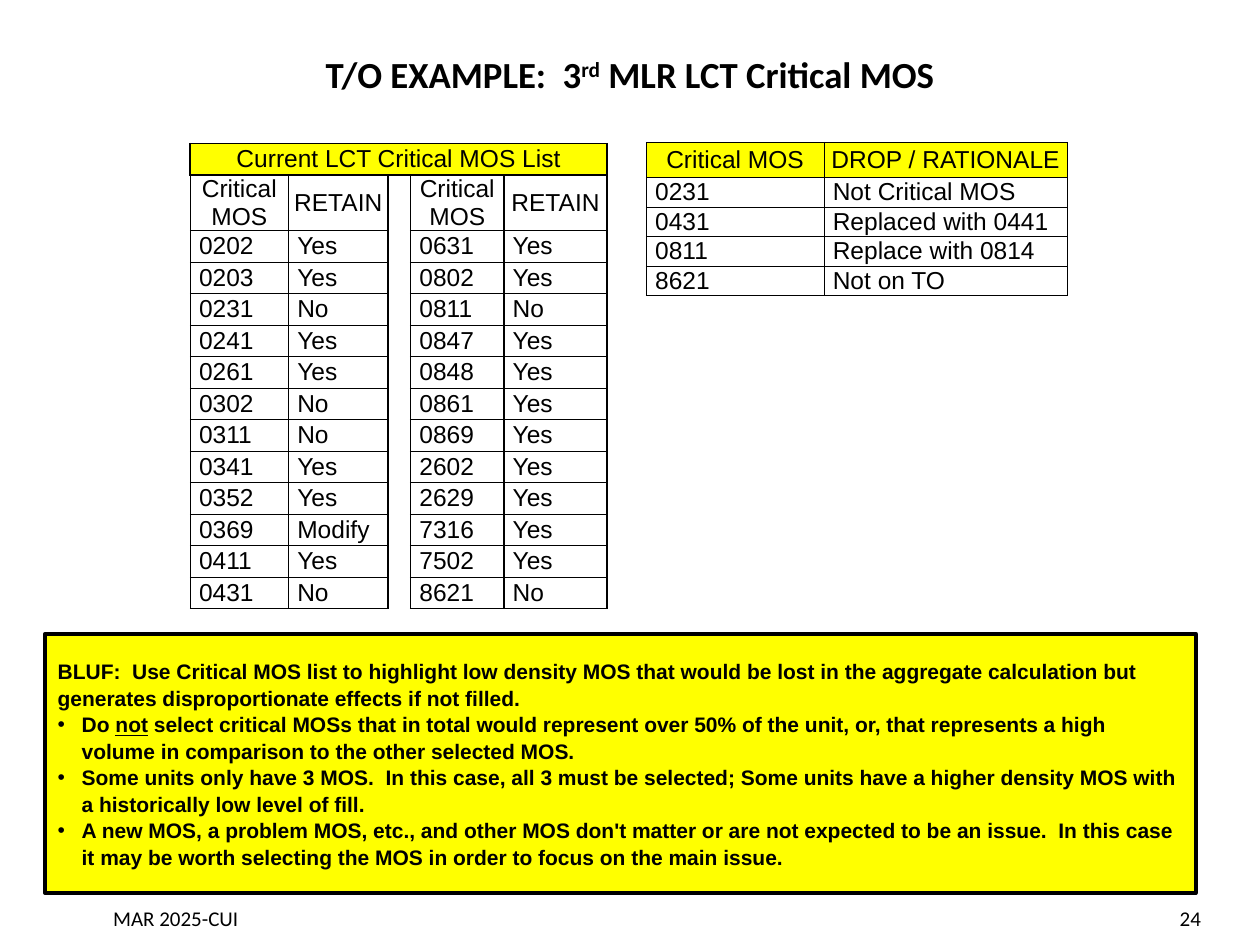
import pptx
import pptx.dml.color
import pptx.enum.shapes
import pptx.enum.text
import pptx.oxml.ns
import pptx.util
from lxml import etree

SLIDE_WIDTH = pptx.util.Inches(10)
SLIDE_HEIGHT = pptx.util.Inches(7.5)
UNIT = SLIDE_WIDTH / 100
COLORS = {"ink": "000000", "paper": "FFFFFF", "highlight": "FFFF00"}
ALIGN = pptx.enum.text.PP_ALIGN
THIN, THICK = 0.5, 1
CELL_INSET = 0.7

RETAIN_LEFT = [
    ("0202", "Yes"), ("0203", "Yes"), ("0231", "No"), ("0241", "Yes"),
    ("0261", "Yes"), ("0302", "No"), ("0311", "No"), ("0341", "Yes"),
    ("0352", "Yes"), ("0369", "Modify"), ("0411", "Yes"), ("0431", "No"),
]
RETAIN_RIGHT = [
    ("0631", "Yes"), ("0802", "Yes"), ("0811", "No"), ("0847", "Yes"),
    ("0848", "Yes"), ("0861", "Yes"), ("0869", "Yes"), ("2602", "Yes"),
    ("2629", "Yes"), ("7316", "Yes"), ("7502", "Yes"), ("8621", "No"),
]
DROPS = [
    ("Critical MOS", "DROP / RATIONALE"),
    ("0231", "Not Critical MOS"),
    ("0431", "Replaced with 0441"),
    ("0811", "Replace with 0814"),
    ("8621", "Not on TO"),
]
BLUF = (
    "BLUF:  Use Critical MOS list to highlight low density MOS that would be lost in the "
    "aggregate calculation but generates disproportionate effects if not filled."
)
BLUF_BULLETS = [
    [
        "Do ",
        ("not", {"u": "sng"}),
        " select critical MOSs that in total would represent over 50% of the unit, or, that "
        "represents a high volume in comparison to the other selected MOS.",
    ],
    "Some units only have 3 MOS.  In this case, all 3 must be selected; Some units have a "
    "higher density MOS with a historically low level of fill.",
    "A new MOS, a problem MOS, etc., and other MOS don't matter or are not expected to be an "
    "issue.  In this case it may be worth selecting the MOS in order to focus on the main issue.",
]


def grid(units):
    return pptx.util.Emu(round(units * UNIT))


def color(name):
    return pptx.dml.color.RGBColor.from_string(COLORS[name])


def add_element(parent, tag, **attributes):
    return etree.SubElement(parent, pptx.oxml.ns.qn(tag), attributes)


def write(paragraph, text, size=12, font="Arial", bold=False, align=ALIGN.LEFT,
          bullet=False, spacing=None):
    if bullet:
        properties = paragraph._p.get_or_add_pPr()
        indent = grid(1.9)
        properties.set("marL", str(indent))
        properties.set("indent", str(-indent))
        add_element(properties, "a:buFont", typeface="Arial")
        add_element(properties, "a:buChar", char="•")
    paragraph.alignment = align
    if spacing:
        paragraph.line_spacing = spacing
    for part in [text] if isinstance(text, str) else text:
        words, extras = (part, {}) if isinstance(part, str) else part
        run = paragraph.add_run()
        run.text = words
        run.font.size = pptx.util.Pt(size)
        run.font.name = font
        run.font.bold = bold
        run.font.color.rgb = color("ink")
        for key, value in extras.items():
            run._r.get_or_add_rPr().set(key, value)


def add_label(slide, box, text, **style):
    label = slide.shapes.add_textbox(*map(grid, box)).text_frame
    label.word_wrap = True
    label.vertical_anchor = pptx.enum.text.MSO_ANCHOR.MIDDLE
    write(label.paragraphs[0], text, font="Calibri", **style)


def set_borders(cell, widths):
    properties = cell._tc.get_or_add_tcPr()
    for side, width in zip("LRTB", widths):
        line = add_element(properties, f"a:ln{side}", w=str(pptx.util.Pt(width)))
        if width:
            fill = add_element(line, "a:solidFill")
            add_element(fill, "a:srgbClr", val=COLORS["ink"])
        else:
            add_element(line, "a:noFill")


def fill_cell(cell, text, borders, fill="paper", heading=False, right_inset=0):
    set_borders(cell, borders)
    cell.fill.solid()
    cell.fill.fore_color.rgb = color(fill)
    cell.margin_top = cell.margin_bottom = 0
    cell.margin_left = 0 if heading else grid(CELL_INSET)
    cell.margin_right = grid(right_inset)
    cell.vertical_anchor = pptx.enum.text.MSO_ANCHOR.MIDDLE
    paragraph = cell.text_frame.paragraphs[0]
    if text:
        write(paragraph, text, size=14, align=ALIGN.CENTER if heading else ALIGN.LEFT)
    else:
        add_element(paragraph._p, "a:endParaRPr", sz="1400")


def add_grid_table(slide, left, top, widths, heights):
    box = (left, top, sum(widths), sum(heights))
    table = slide.shapes.add_table(len(heights), len(widths), *map(grid, box)).table
    table.first_row = table.horz_banding = False
    for column, width in zip(table.columns, widths):
        column.width = grid(width)
    for row, height in zip(table.rows, heights):
        row.height = grid(height)
    return table


def add_retain_table(slide):
    headings = ("Critical MOS", "RETAIN")
    rows = [("Current LCT Critical MOS List", "", "", "", ""), (*headings, "", *headings)]
    rows += [(*left, "", *right) for left, right in zip(RETAIN_LEFT, RETAIN_RIGHT)]
    heights = [2.5, 4.4] + [2.5] * len(RETAIN_LEFT)
    table = add_grid_table(slide, 15.1, 11.4, (7.8, 7.9, 1.8, 7.4, 8.2), heights)
    table.cell(0, 0).merge(table.cell(0, 4))
    for r, row in enumerate(rows):
        for c, text in enumerate(row):
            title, gap = r == 0, c == 2 and r > 0
            left = THIN if c == 0 and not title else THICK
            top = THICK if r < 2 else 0 if gap else THIN
            bottom = THICK if title else 0 if gap else THIN
            fill_cell(table.cell(r, c), text, (left, THICK, top, bottom),
                      fill="highlight" if title else "paper", heading=r < 2,
                      right_inset=CELL_INSET if r > 1 and c < 2 else 0)


def add_drop_table(slide):
    heights = [2.8] + [2.25] * (len(DROPS) - 1)
    table = add_grid_table(slide, 51.3, 11.3, (14.1, 19.3), heights)
    for r, row in enumerate(DROPS):
        for c, text in enumerate(row):
            fill_cell(table.cell(r, c), text, [THIN] * 4,
                      fill="paper" if r else "highlight", heading=r == 0)


def add_bluf_panel(slide):
    panel = slide.shapes.add_shape(
        pptx.enum.shapes.MSO_SHAPE.RECTANGLE, *map(grid, (3.6, 50.3, 91.3, 20.6)))
    panel.shadow.inherit = False
    panel.fill.solid()
    panel.fill.fore_color.rgb = color("highlight")
    panel.line.color.rgb = color("ink")
    panel.line.width = pptx.util.Pt(2.25)
    frame = panel.text_frame
    frame.word_wrap = True
    frame.vertical_anchor = pptx.enum.text.MSO_ANCHOR.MIDDLE
    write(frame.paragraphs[0], BLUF, bold=True, spacing=1.05)
    for point in BLUF_BULLETS:
        write(frame.add_paragraph(), point, bold=True, bullet=True, spacing=1.05)


def main():
    presentation = pptx.Presentation()
    presentation.slide_width = SLIDE_WIDTH
    presentation.slide_height = SLIDE_HEIGHT
    slide = presentation.slides.add_slide(presentation.slide_layouts[6])
    add_retain_table(slide)
    title = ["T/O EXAMPLE:  3", ("rd", {"baseline": "30000"}), " MLR LCT Critical MOS"]
    add_label(slide, (0, 2.1, 100, 7.5), title, size=21, bold=True, align=ALIGN.CENTER)
    add_bluf_panel(slide)
    add_drop_table(slide)
    add_label(slide, (0, 70.9, 27.9, 4), "MAR 2025-CUI", align=ALIGN.CENTER)
    add_label(slide, (73, 70.9, 23.3, 4), "24", align=ALIGN.RIGHT)
    presentation.save("out.pptx")


if __name__ == "__main__":
    main()
